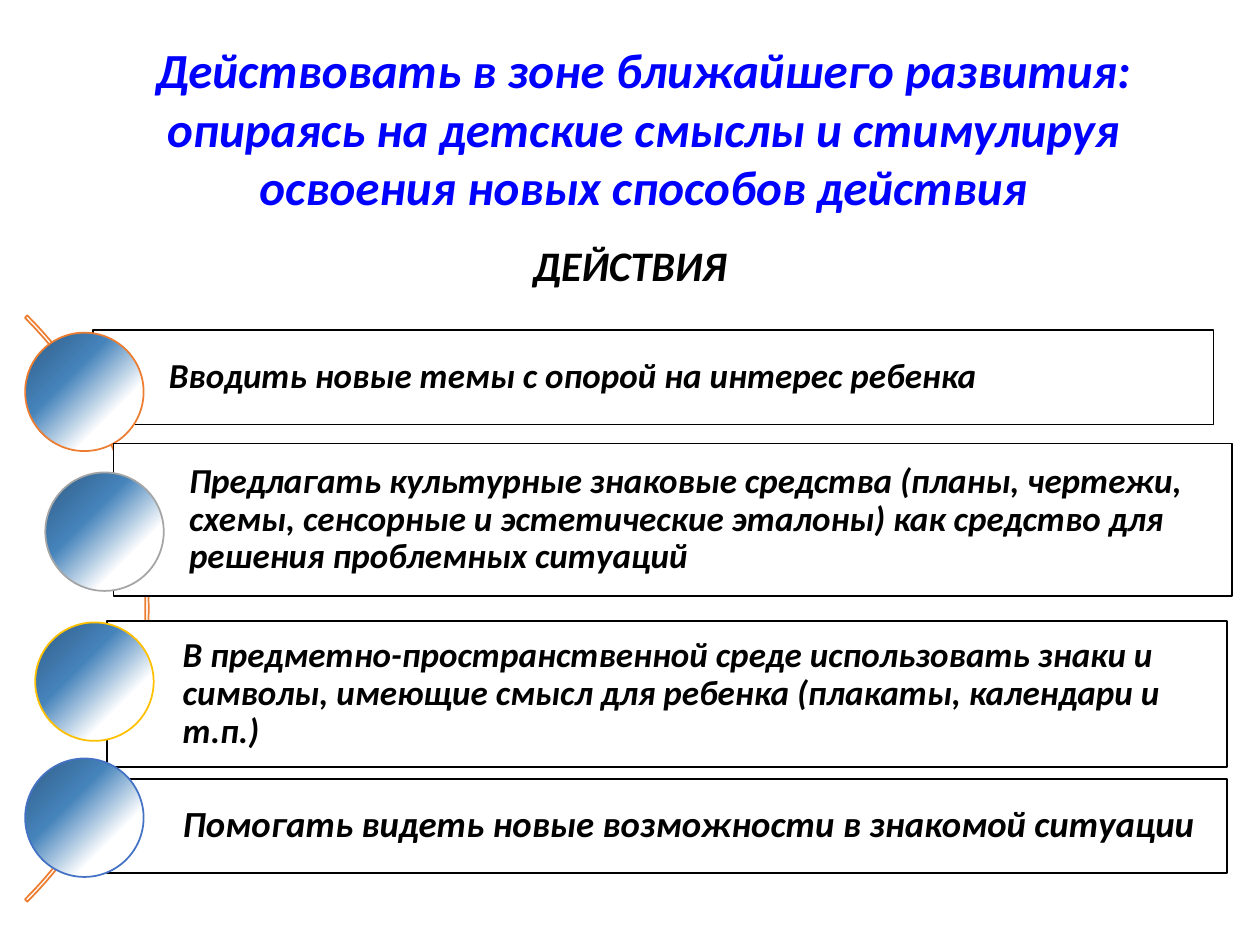
from copy import deepcopy
from pptx import Presentation
from pptx.dml.color import RGBColor
from pptx.enum.shapes import MSO_SHAPE as Shape
from pptx.enum.text import MSO_ANCHOR as Anchor, PP_ALIGN as Align
from pptx.oxml.ns import qn
from pptx.util import Inches, Pt

TITLE = ("Действовать в зоне ближайшего развития: опираясь на детские смыслы "
         "и стимулируя освоения новых способов действия")
HEADING = "ДЕЙСТВИЯ"
ORANGE = "ED7D31"
BALL = 0.94
BALL_STOPS = [(0, "305C84"), (0.37, "4583BB"), (0.71, "FFFFFF")]

# text, size, bar (left, top, width, height), ball (left, top), ball outline
ACTIONS = [
    ("Вводить новые темы с опорой на интерес ребенка", 20,
     (0.74, 2.62, 8.89, 0.75), (0.2, 2.64), ORANGE),
    ("Предлагать культурные знаковые средства (планы, чертежи, схемы, "
     "сенсорные и эстетические эталоны) как средство для решения "
     "проблемных ситуаций", 20,
     (0.9, 3.52, 8.88, 1.21), (0.36, 3.75), "A5A5A5"),
    ("В предметно-пространственной среде использовать знаки и символы, "
     "имеющие смысл для ребенка (плакаты, календари и т.п.)", 20,
     (0.85, 4.93, 8.89, 1.16), (0.28, 4.94), "FFC000"),
    ("Помогать видеть новые возможности в знакомой ситуации", 21,
     (0.85, 6.18, 8.89, 0.75), (0.2, 6.02), "4472C4"),
]


def color(code):
    return RGBColor.from_string(code)


def add_shape(kind, box, fill=None, line=None):
    shape = slide.shapes.add_shape(kind, *map(Inches, box))
    shape.shadow.inherit = False
    if fill:
        shape.fill.solid()
        shape.fill.fore_color.rgb = color(fill)
    else:
        shape.fill.background()
    if line:
        shape.line.color.rgb = color(line)
        shape.line.width = Pt(1)
    else:
        shape.line.fill.background()
    return shape


def write(shape, text, size, ink="000000", align=Align.LEFT, anchor=Anchor.TOP,
          insets=(0.1, 0.05, 0.1, 0.05), spacing=None, wrap=True):
    frame = shape.text_frame
    frame.word_wrap = wrap
    frame.vertical_anchor = anchor
    (frame.margin_left, frame.margin_top,
     frame.margin_right, frame.margin_bottom) = map(Inches, insets)
    para = frame.paragraphs[0]
    para.alignment = align
    para.line_spacing = spacing
    run = para.add_run()
    run.text = text
    font = run.font
    font.name, font.size = "Calibri", Pt(size)
    font.bold = font.italic = True
    font.color.rgb = color(ink)


def shade(shape, stops):
    """Fill with a gradient from top left to bottom right."""
    fill = shape.fill
    fill.gradient()
    fill.gradient_angle = 315
    holder = shape._element.spPr.find(".//" + qn("a:gsLst"))
    while len(holder) < len(stops):
        holder.append(deepcopy(holder[0]))
    for stop, (place, code) in zip(fill.gradient_stops, stops):
        stop.position = place
        stop.color.rgb = color(code)


deck = Presentation()
deck.slide_width, deck.slide_height = Inches(10), Inches(7.5)
slide = deck.slides.add_slide(deck.slide_layouts[6])

title = add_shape(Shape.ROUNDED_RECTANGLE, (0.47, 0.18, 9.27, 1.68), fill="FFFFFF")
write(title, TITLE, 28, ink="0000FF", align=Align.CENTER)
heading = slide.shapes.add_textbox(*map(Inches, (4.13, 1.85, 2.15, 0.5)))
write(heading, HEADING, 24)

arc = add_shape(Shape.BLOCK_ARC, (-5.4, 1.54, 6.58, 6.58), line=ORANGE)
for index, value in enumerate((189, 27, 0.004)):
    arc.adjustments[index] = value

for text, size, box, spot, edge in ACTIONS:
    bar = add_shape(Shape.RECTANGLE, box, fill="FFFFFF", line="000000")
    write(bar, text, size, anchor=Anchor.MIDDLE,
          insets=(0.6, 0.06, 0.06, 0.06), spacing=0.9)
    ball = add_shape(Shape.OVAL, (*spot, BALL, BALL), line=edge)
    shade(ball, BALL_STOPS)

deck.save("out.pptx")
